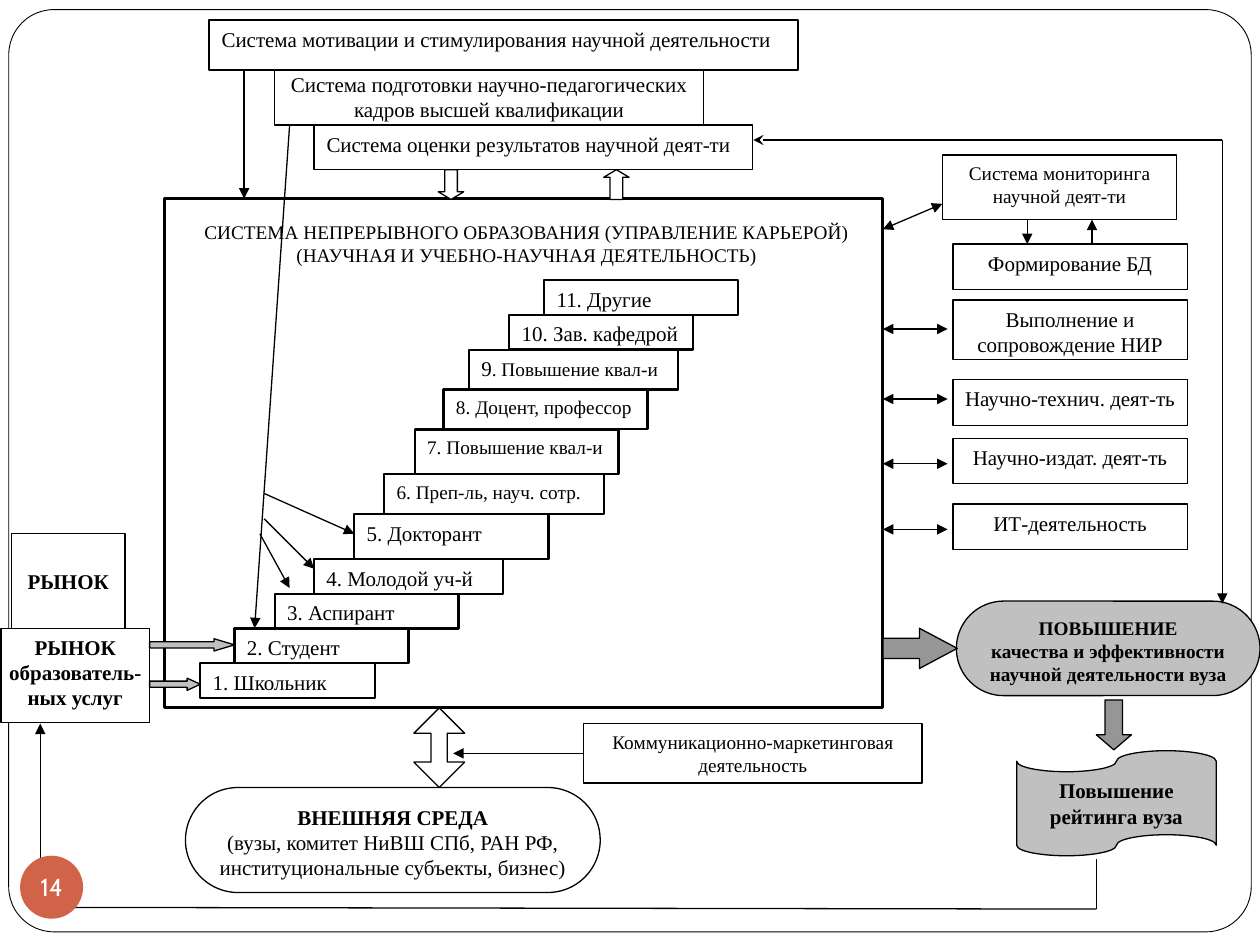
from lxml import etree
from pptx import Presentation
from pptx.dml.color import RGBColor
from pptx.enum.shapes import MSO_CONNECTOR, MSO_SHAPE
from pptx.enum.text import MSO_ANCHOR, PP_ALIGN
from pptx.oxml.ns import qn
from pptx.util import Pt

RECT, ROUND = MSO_SHAPE.RECTANGLE, MSO_SHAPE.ROUNDED_RECTANGLE
TAPE, OVAL = MSO_SHAPE.FLOWCHART_PUNCHED_TAPE, MSO_SHAPE.OVAL
RIGHT, DOWN = MSO_SHAPE.RIGHT_ARROW, MSO_SHAPE.DOWN_ARROW
UP, BOTH = MSO_SHAPE.UP_ARROW, MSO_SHAPE.UP_DOWN_ARROW
STRAIGHT = MSO_CONNECTOR.STRAIGHT
LEFT, MID = PP_ALIGN.LEFT, PP_ALIGN.CENTER
TOP, CENTER = MSO_ANCHOR.TOP, MSO_ANCHOR.MIDDLE

BLACK = RGBColor(0, 0, 0)
WHITE = RGBColor(255, 255, 255)
SILVER = RGBColor(0xC0, 0xC0, 0xC0)
GRAY = RGBColor(0x96, 0x96, 0x96)
RUST = RGBColor(0xD1, 0x63, 0x49)

BASE = dict(kind=RECT, fill=WHITE, line=0.75, size=12, bold=False, align=MID,
            font="Times New Roman", color=BLACK, anchor=TOP, pad=(7.2, 3.6),
            adj=(), wrap=True)
SLIM = dict(pad=(1.44, 3.6))
PILL = dict(kind=ROUND, adj=(0.5,), pad=(4.32, 0.72))

# Career steps from the top down: left, width, height, size, text
STEPS = [
    (311, 111, 19.9, 12, "11. Другие"),
    (291, 105, 19.9, 12, "10. Зав. кафедрой"),
    (268, 119.5, 22.8, 11, [("9", {"size": 12}), (". Повышение квал-и", {})]),
    (253.5, 116.5, 22.8, 11, "8. Доцент, профессор"),
    (237, 116.5, 25.6, 11, "7. Повышение квал-и"),
    (219.5, 125.5, 22.8, 11, "6. Преп-ль, науч. сотр."),
    (202.5, 111, 25.6, 12, "5. Докторант"),
    (179.5, 108, 19.9, 12, "4. Молодой уч-й"),
    (157, 105, 19.9, 12, "3. Аспирант"),
    (134, 99.5, 19.9, 12, "2. Студент"),
    (114.5, 100, 19.9, 12, "1. Школьник"),
]
STEP_TOP = 160

# Activities in the right column: top, height, text
TASKS = [
    (139.5, 26, "Формирование БД"),
    (171.5, 34, "Выполнение и сопровождение НИР"),
    (217, 26, "Научно-технич. деят-ть"),
    (250.5, 26, "Научно-издат. деят-ть"),
    (288, 26, "ИТ-деятельность"),
]

# Frame and main field: box, paragraphs, format
FIELD = [
    ((5, 5.5, 710, 527), [], dict(kind=ROUND, adj=(0.049,), line=0.5)),
    ((94, 113.5, 410.5, 291), [], dict(line=1.75)),
]
BOXES = [
    ((106, 122.5, 390, 31.5),
     ["СИСТЕМА НЕПРЕРЫВНОГО ОБРАЗОВАНИЯ (УПРАВЛЕНИЕ КАРЬЕРОЙ)",
      "(НАУЧНАЯ И УЧЕБНО-НАУЧНАЯ ДЕЯТЕЛЬНОСТЬ)"], dict(size=11, line=0)),
    ((119.5, 11.5, 336.5, 28.5),
     ["Система мотивации и стимулирования научной деятельности"],
     dict(align=LEFT)),
    ((179.5, 71.5, 250.5, 25.5),
     ["Система оценки результатов научной деят-ти"], dict(align=LEFT)),
    ((157, 40, 245, 31.5),
     ["Система подготовки научно-педагогических кадров высшей квалификации"],
     dict(pad=(1.44, 0.72))),
    ((538.5, 88.5, 134, 37), ["Система мониторинга", "научной деят-ти"],
     dict(SLIM, size=11)),
    ((0.5, 359, 85, 54), ["РЫНОК", "образователь-ных услуг"],
     dict(bold=True, pad=(4.32, 3.6))),
    ((6.5, 305, 65, 54), ["РЫНОК"], dict(bold=True, anchor=CENTER)),
    ((106, 450, 237, 60),
     [[("ВНЕШНЯЯ СРЕДА", {"bold": True})],
      "(вузы, комитет НиВШ СПб, РАН РФ, институциональные субъекты, бизнес)"],
     PILL),
    ((333.5, 413.5, 193.5, 34), ["Коммуникационно-маркетинговая деятельность"],
     dict(size=11)),
    ((546.5, 343.5, 173.5, 54),
     ["ПОВЫШЕНИЕ", "качества и эффективности", "научной деятельности вуза"],
     dict(PILL, fill=SILVER, size=11, bold=True)),
    ((581, 429, 114, 60), ["Повышение рейтинга вуза"],
     dict(kind=TAPE, fill=SILVER, bold=True)),
]

# Lines: x1, y1, x2, y2, head, tail
TRI = "triangle"
LINES = [
    (139.5, 40, 139.5, 113.5, None, TRI),
    (165.5, 71.5, 145.5, 359, None, TRI),
    (148.5, 305, 165.5, 336, None, TRI),
    (151, 282, 202.5, 305, None, TRI),
    (151, 296.5, 179.5, 325, None, TRI),
    (430.5, 80, 698.5, 80, "stealth", None),
    (698.5, 80, 698.5, 345, None, TRI),
    (587, 125.5, 587, 139.5, None, TRI),
    (624, 139.5, 624, 125.5, None, TRI),
    (504.5, 131, 538.5, 116.5, TRI, TRI),
    (333.5, 430.5, 259, 430.5, None, TRI),
    (23, 518.5, 626.5, 519.5, None, None),
    (626.5, 519.5, 626.5, 491, None, None),
    (23, 518.5, 23, 413.5, None, TRI),
]
LINES += [(504.5, y, 541.5, y, TRI, TRI) for y in (188, 228, 265, 302.5)]

# Block arrows: kind, box, fill, head length
ARROWS = [
    (RIGHT, (85.5, 387.5, 29, 7), SILVER, 1.08),
    (RIGHT, (85.5, 365, 48.5, 7), SILVER, 1.67),
    (RIGHT, (504.5, 359, 42.5, 23), GRAY, 0.94),
    (DOWN, (626.5, 400, 20, 28.5), GRAY, 0.43),
    (BOTH, (236.5, 404.5, 29, 45.5), WHITE, 0.32),
    (DOWN, (250.5, 97, 14.5, 17), WHITE, 0.3),
    (UP, (345, 97, 14.5, 17), WHITE, 0.3),
]


def add_box(box, paras=(), form=None):
    fmt = {**BASE, **(form or {})}
    shape = page.add_shape(fmt["kind"], *map(Pt, box))
    shape.shadow.inherit = False
    for i, val in enumerate(fmt["adj"]):
        shape.adjustments[i] = val
    shape.fill.solid()
    shape.fill.fore_color.rgb = fmt["fill"]
    if fmt["line"]:
        shape.line.color.rgb = BLACK
        shape.line.width = Pt(fmt["line"])
    else:
        shape.line.fill.background()
    frame = shape.text_frame
    side, edge = map(Pt, fmt["pad"])
    looks = dict(word_wrap=fmt["wrap"], vertical_anchor=fmt["anchor"],
                 margin_left=side, margin_right=side,
                 margin_top=edge, margin_bottom=edge)
    for name, val in looks.items():
        setattr(frame, name, val)
    for i, runs in enumerate(paras):
        para = frame.add_paragraph() if i else frame.paragraphs[0]
        para.alignment = fmt["align"]
        for text, extra in [(runs, {})] if isinstance(runs, str) else runs:
            look = {**fmt, **extra}
            run = para.add_run()
            run.text = text
            face = dict(name=look["font"], size=Pt(look["size"]), bold=look["bold"])
            for name, val in face.items():
                setattr(run.font, name, val)
            run.font.color.rgb = look["color"]


def add_line(x1, y1, x2, y2, head, tail):
    line = page.add_connector(STRAIGHT, Pt(x1), Pt(y1), Pt(x2), Pt(y2))
    line.line.color.rgb = BLACK
    line.line.width = Pt(0.75)
    props = line.line._get_or_add_ln()
    for tag, kind in (("a:headEnd", head), ("a:tailEnd", tail)):
        if kind:
            etree.SubElement(props, qn(tag)).set("type", kind)
    etree.SubElement(line._element.spPr, qn("a:effectLst"))


deck = Presentation()
deck.slide_width, deck.slide_height = Pt(720), Pt(540)
page = deck.slides.add_slide(deck.slide_layouts[6]).shapes

for item in FIELD + BOXES:
    add_box(*item)

# Staircase, each step right under the one above
top = STEP_TOP
for left, width, high, size, text in STEPS:
    add_box((left, top, width, high), [text], dict(size=size, align=LEFT, line=1.25))
    top += high

for top, high, text in TASKS:
    add_box((544.5, top, 134, high), [text], SLIM)

for item in LINES:
    add_line(*item)
for kind, box, fill, head in ARROWS:
    add_box(box, form=dict(kind=kind, fill=fill, adj=(0.5, head)))

# Page number
add_box((11.5, 489, 36, 36), ["14"],
        dict(kind=OVAL, fill=RUST, line=0, size=14, font="Cabin", color=WHITE,
             anchor=CENTER, pad=(0, 0), wrap=False))

deck.save("out.pptx")
